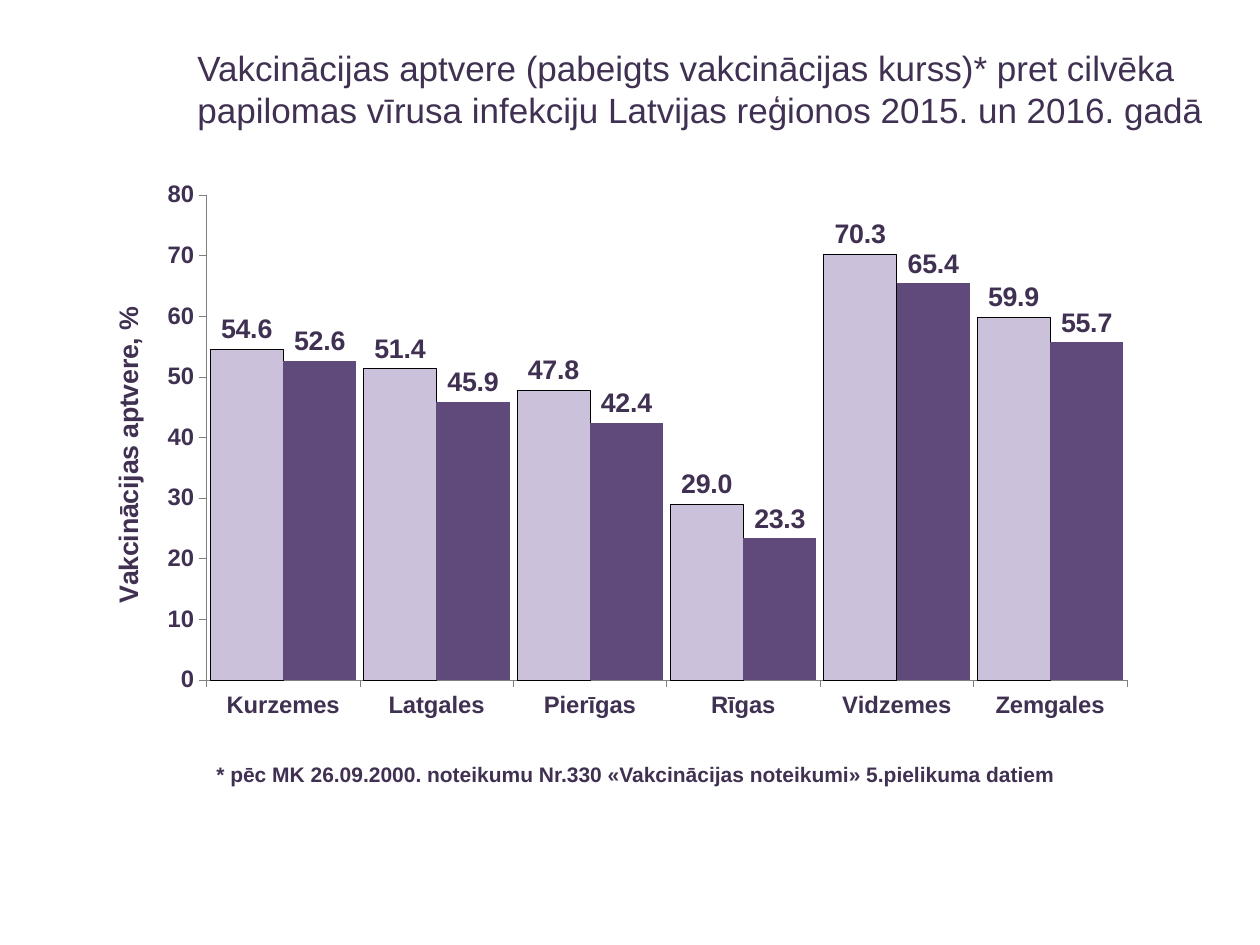
from lxml import etree
from pptx import Presentation
from pptx import util as u
from pptx.chart.data import CategoryChartData
from pptx.dml.color import RGBColor
from pptx.enum import chart as charts, text
from pptx.oxml import parse_xml
from pptx.oxml.ns import nsdecls, qn

PX = 914400 / 126
INK = RGBColor(0x40, 0x31, 0x52)
LILAC = RGBColor(0xCC, 0xC1, 0xDA)
PURPLE = RGBColor(0x60, 0x4A, 0x7B)
GREY = RGBColor(0x80, 0x80, 0x80)
BLACK = RGBColor(0, 0, 0)


def box(*lengths):
    """Turn pixel lengths into EMU."""
    return [u.Emu(round(length * PX)) for length in lengths]


def style(font, size, bold):
    font.name, font.size, font.bold = "Arial", u.Pt(size), bold
    font.color.rgb = INK


presentation = Presentation()
presentation.slide_width, presentation.slide_height = box(1260, 945)
slide = presentation.slides.add_slide(presentation.slide_layouts[6])

# Chart
data = CategoryChartData(number_format="#,##0.0")
data.categories = ["Kurzemes", "Latgales", "Pierīgas", "Rīgas", "Vidzemes", "Zemgales"]
data.add_series("Series 1", [54.6, 51.4, 47.8, 29, 70.3, 59.9])
data.add_series("Series 2", [52.6, 45.9, 42.4, 23.3, 65.4, 55.7])
chart = slide.shapes.add_chart(
    charts.XL_CHART_TYPE.COLUMN_CLUSTERED, *box(64, 169, 1063, 606), data).chart
chart.has_legend = False
chart.has_title = False
style(chart.font, 15.3, True)

plot = chart.plots[0]
plot.gap_width = 10
plot.overlap = 0
plot.vary_by_categories = False
for series, color in zip(plot.series, (LILAC, PURPLE)):
    series.invert_if_negative = False
    series.format.fill.solid()
    series.format.fill.fore_color.rgb = color
    labels = series.data_labels
    labels.show_value = True
    labels.position = charts.XL_LABEL_POSITION.OUTSIDE_END
    labels.number_format = "#,##0.0"
    labels.number_format_is_linked = False
    style(labels.font, 15.3, True)
plot.series[0].format.line.color.rgb = BLACK
plot.series[0].format.line.width = u.Pt(0.21)
plot.series[1].format.line.fill.background()

for axis in (chart.category_axis, chart.value_axis):
    axis.has_major_gridlines = False
    axis.major_tick_mark = charts.XL_TICK_MARK.OUTSIDE
    axis.minor_tick_mark = charts.XL_TICK_MARK.NONE
    axis.format.line.color.rgb = GREY
    axis.format.line.width = u.Pt(0.21)
    style(axis.tick_labels.font, 13.6, True)

value_axis = chart.value_axis
value_axis.minimum_scale, value_axis.maximum_scale = 0, 80
value_axis.major_unit = 10
value_axis.tick_labels.number_format = "0"
value_axis.tick_labels.number_format_is_linked = False
title_frame = value_axis.axis_title.text_frame
title_frame.text = "Vakcinācijas aptvere, %"
style(title_frame.paragraphs[0].runs[0].font, 15.3, True)
axis_title = value_axis.axis_title._element
body = axis_title.find(".//" + qn("a:bodyPr"))
body.set("rot", "-5400000")
body.set("vert", "horz")

# Fixed places for the plot area and the axis title, as fractions of the chart
plot_area = chart._chartSpace.chart.plotArea
layouts = (
    (plot_area, {"layoutTarget": "inner", "xMode": "edge", "yMode": "edge",
                 "x": 0.134, "y": 0.043, "w": 0.866, "h": 0.8}),
    (axis_title, {"xMode": "edge", "yMode": "edge", "x": 0.04, "y": 0.22}),
)
for parent, settings in layouts:
    for old in parent.findall(qn("c:layout")):
        parent.remove(old)
    layout = parse_xml(f"<c:layout {nsdecls('c')}><c:manualLayout/></c:layout>")
    for name, value in settings.items():
        etree.SubElement(layout[0], qn("c:" + name)).set("val", str(value))
    parent.insert(0 if parent is plot_area else 1, layout)

# Footnote and heading
captions = (
    ("* pēc MK 26.09.2000. noteikumu Nr.330 «Vakcinācijas noteikumi» 5.pielikuma datiem",
     (204, 755, 1234, 38), 12, True),
    ("Vakcinācijas aptvere (pabeigts vakcinācijas kurss)* pret cilvēka papilomas vīrusa "
     "infekciju Latvijas reģionos 2015. un 2016. gadā",
     (185, 40, 1040, 97), 20, False),
)
for wording, place, size, bold in captions:
    frame = slide.shapes.add_textbox(*box(*place)).text_frame
    frame.word_wrap = True
    frame.auto_size = text.MSO_AUTO_SIZE.SHAPE_TO_FIT_TEXT
    frame.text = wording
    style(frame.paragraphs[0].runs[0].font, size, bold)

presentation.save("out.pptx")
